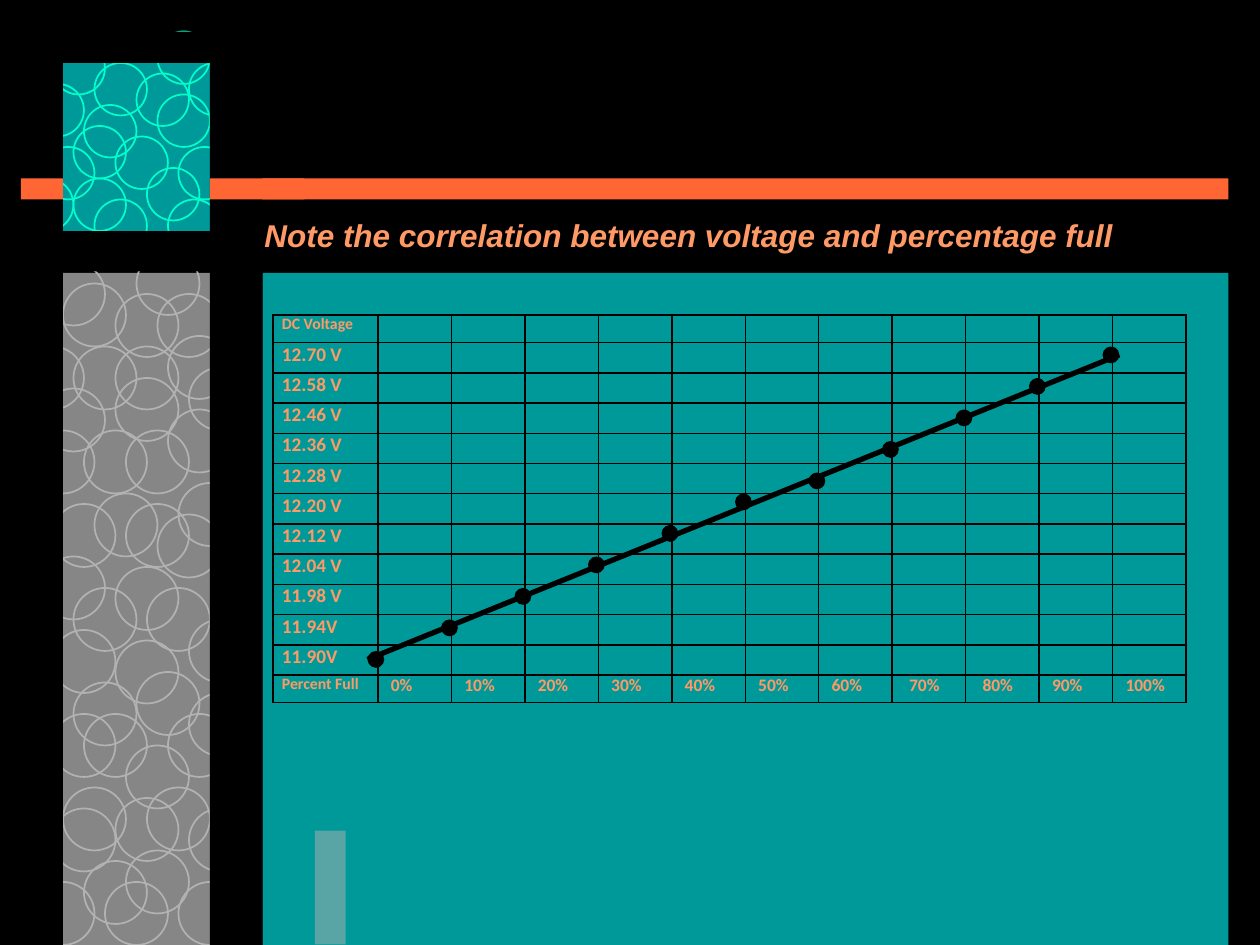
from dataclasses import dataclass
from typing import NamedTuple, Optional

from lxml.etree import SubElement
from pptx import Presentation
from pptx.dml.color import RGBColor as RGB
from pptx.enum.shapes import MSO_CONNECTOR as CONN, MSO_SHAPE as SHAPE
from pptx.oxml.ns import qn
from pptx.util import Cm, Pt


@dataclass(frozen=True)
class Theme:
    black: str = "000000"
    teal: str = "009999"
    orange: str = "FF6633"
    text: str = "FF9966"
    gray: str = "868686"
    gray_ring: str = "B2B2B2"
    teal_ring: str = "00FFCC"
    title_font: str = "Arial"
    table_font: str = "Calibri"
    title_size: float = 18
    volt_size: float = 11
    percent_size: float = 10
    head_size: float = 9


T = Theme()


class Box(NamedTuple):
    """Left, top, width and height in grid units."""
    x: float
    y: float
    w: float
    h: float


class Block(NamedTuple):
    box: Box
    color: str


class RingPattern(NamedTuple):
    size: float
    color: str
    corners: list[tuple[float, float]]


BACKDROP = [
    Block(Box(25, 26, 92, 64), T.teal),
    Block(Box(2, 17, 115, 2), T.orange),
    Block(Box(6, 6, 14, 16), T.teal),
    Block(Box(6, 26, 14, 64), T.gray),
]
RINGS = [
    RingPattern(6, T.gray_ring, [
        (4, 25), (11, 28), (7, 33), (13, 24), (6, 27), (5, 60), (16, 32), (11, 36),
        (12, 41), (8, 41), (4, 37), (5, 48), (12, 48), (9, 47), (7, 56), (17, 46),
        (14, 56), (11, 61), (15, 49), (4, 53), (16, 39), (3, 41), (13, 64), (5, 68),
        (8, 68), (7, 65), (16, 68), (5, 77), (6, 75), (12, 71), (11, 76), (14, 75),
        (8, 82), (12, 81), (17, 84), (10, 84), (3, 84), (11, 54), (15, 28), (2, 33),
        (18, 59), (18, 35), (18, 66), (18, 77), (11, 33)]),
    RingPattern(5, T.teal_ring, [
        (9, 6), (11, 13), (17, 14), (18, 6), (7, 17), (16, 19), (7, 12), (14, 16),
        (9, 19), (13, 7), (15, 9), (8, 10), (4, 14), (3, 8), (2, 17), (15, 3), (5, 4)]),
]
# Black blocks trim the rings to their panels; the band is laid over them again.
TRIM = [
    Block(Box(4, 3, 17, 3), T.black),
    Block(Box(1, 5, 5, 85), T.black),
    Block(Box(2, 17, 4, 2), T.orange),
    Block(Box(4, 22, 17, 3.84), T.black),
    Block(Box(20, 4, 5, 86), T.black),
    Block(Box(20, 17, 9, 2), T.orange),
]
VOLTAGES = ["12.70 V", "12.58 V", "12.46 V", "12.36 V", "12.28 V", "12.20 V",
            "12.12 V", "12.04 V", "11.98 V", "11.94V", "11.90V"]
PERCENTS = [f"{n}%" for n in range(0, 101, 10)]
LABEL_COL, VALUE_COL = 10, 7
LABEL_ROW, VALUE_ROW = 2.64, 2.88
DOT = 1.6


def grid(n: float) -> Cm:
    """Length of n grid units, twelve to the inch."""
    return Cm(2.54 * n / 12)


def add_shape(s, kind: SHAPE, box: Box, fill: Optional[str] = None,
              line: Optional[str] = None):
    sp = s.shapes.add_shape(kind, *map(grid, box))
    sp.shadow.inherit = False
    if fill:
        sp.fill.solid()
        sp.fill.fore_color.rgb = RGB.from_string(fill)
    else:
        sp.fill.background()
    if line:
        sp.line.color.rgb = RGB.from_string(line)
        sp.line.width = Pt(1)
    else:
        sp.line.fill.background()
    return sp


def add_blocks(s, blocks: list[Block]) -> None:
    for block in blocks:
        add_shape(s, SHAPE.RECTANGLE, block.box, block.color)


def add_run(p, text: str, font: str, size: float, italic: bool = False) -> None:
    r = p.add_run()
    r.text = text
    r.font.name = font
    r.font.size = Pt(size)
    r.font.bold = True
    r.font.italic = italic
    r.font.color.rgb = RGB.from_string(T.text)


def add_border(cell) -> None:
    tc_pr = cell._tc.get_or_add_tcPr()
    for side in ("a:lnL", "a:lnR", "a:lnT", "a:lnB"):
        ln = SubElement(tc_pr, qn(side), w=str(Pt(1)))
        SubElement(SubElement(ln, qn("a:solidFill")), qn("a:srgbClr"), val=T.black)


def style_cell(cell, text: str, size: float, indent: float) -> None:
    add_border(cell)
    cell.fill.background()
    cell.margin_left, cell.margin_right = Cm(indent), Cm(0.18)
    cell.margin_top = cell.margin_bottom = 0
    p = cell.text_frame.paragraphs[0]
    if text:
        add_run(p, text, T.table_font, size)
    else:
        # Keeps an empty cell from growing its row
        SubElement(p._p, qn("a:endParaRPr"), sz=str(int(size * 100)))


def add_voltage_table(s) -> None:
    blanks = [""] * len(PERCENTS)
    rows = [["DC Voltage", *blanks], *([v, *blanks] for v in VOLTAGES),
            ["Percent Full", *PERCENTS]]
    widths = [LABEL_COL] + [VALUE_COL] * len(PERCENTS)
    heights = [LABEL_ROW] + [VALUE_ROW] * len(VOLTAGES) + [LABEL_ROW]
    frame = s.shapes.add_table(len(rows), len(widths), grid(26), grid(30),
                               grid(sum(widths)), grid(sum(heights)))
    table = frame.table
    table.first_row = table.horz_banding = False
    for col, width in zip(table.columns, widths):
        col.width = grid(width)
    for i, (row, height) in enumerate(zip(rows, heights)):
        table.rows[i].height = grid(height)
        for j, text in enumerate(row):
            size, indent = T.head_size, 0.18
            if text in VOLTAGES:
                size = T.volt_size
            elif text in PERCENTS:
                size = T.percent_size
                indent = 0.34 if text in ("70%", "80%") else 0.26
            style_cell(table.cell(i, j), text, size, indent)


def add_trend(s) -> None:
    dots = [Box(35 + 7 * i, 62 - 3 * i + (i > 5), DOT, DOT)
            for i in range(len(PERCENTS))]
    for dot in dots:
        add_shape(s, SHAPE.OVAL, dot, T.black)
    first, last = dots[0], dots[-1]
    line = s.shapes.add_connector(
        CONN.STRAIGHT, grid(first.x), grid(first.y + DOT / 2),
        grid(last.x + DOT), grid(last.y + DOT / 2))
    line.line.color.rgb = RGB.from_string(T.black)
    line.line.width = Pt(3)
    SubElement(line._element.spPr, qn("a:effectLst"))


def add_title(s) -> None:
    tf = s.shapes.add_textbox(*map(grid, Box(24, 20, 93, 4.8))).text_frame
    tf.word_wrap = True
    add_run(tf.paragraphs[0], "Note the correlation between voltage and percentage full",
            T.title_font, T.title_size, italic=True)


def main() -> None:
    prs = Presentation()
    prs.slide_width, prs.slide_height = grid(120), grid(90)
    s = prs.slides.add_slide(prs.slide_layouts[6])
    s.background.fill.solid()
    s.background.fill.fore_color.rgb = RGB.from_string(T.black)
    add_blocks(s, BACKDROP)
    for rings in RINGS:
        for x, y in rings.corners:
            add_shape(s, SHAPE.OVAL, Box(x, y, rings.size, rings.size), line=rings.color)
    add_blocks(s, TRIM)
    bar = add_shape(s, SHAPE.RECTANGLE, Box(30, 79.1, 2.92, 10.85), T.gray_ring)
    color = bar._element.spPr.find(qn("a:solidFill")).find(qn("a:srgbClr"))
    SubElement(color, qn("a:alpha"), val="50000")
    add_voltage_table(s)
    add_trend(s)
    add_title(s)
    prs.save("out.pptx")


if __name__ == "__main__":
    main()
